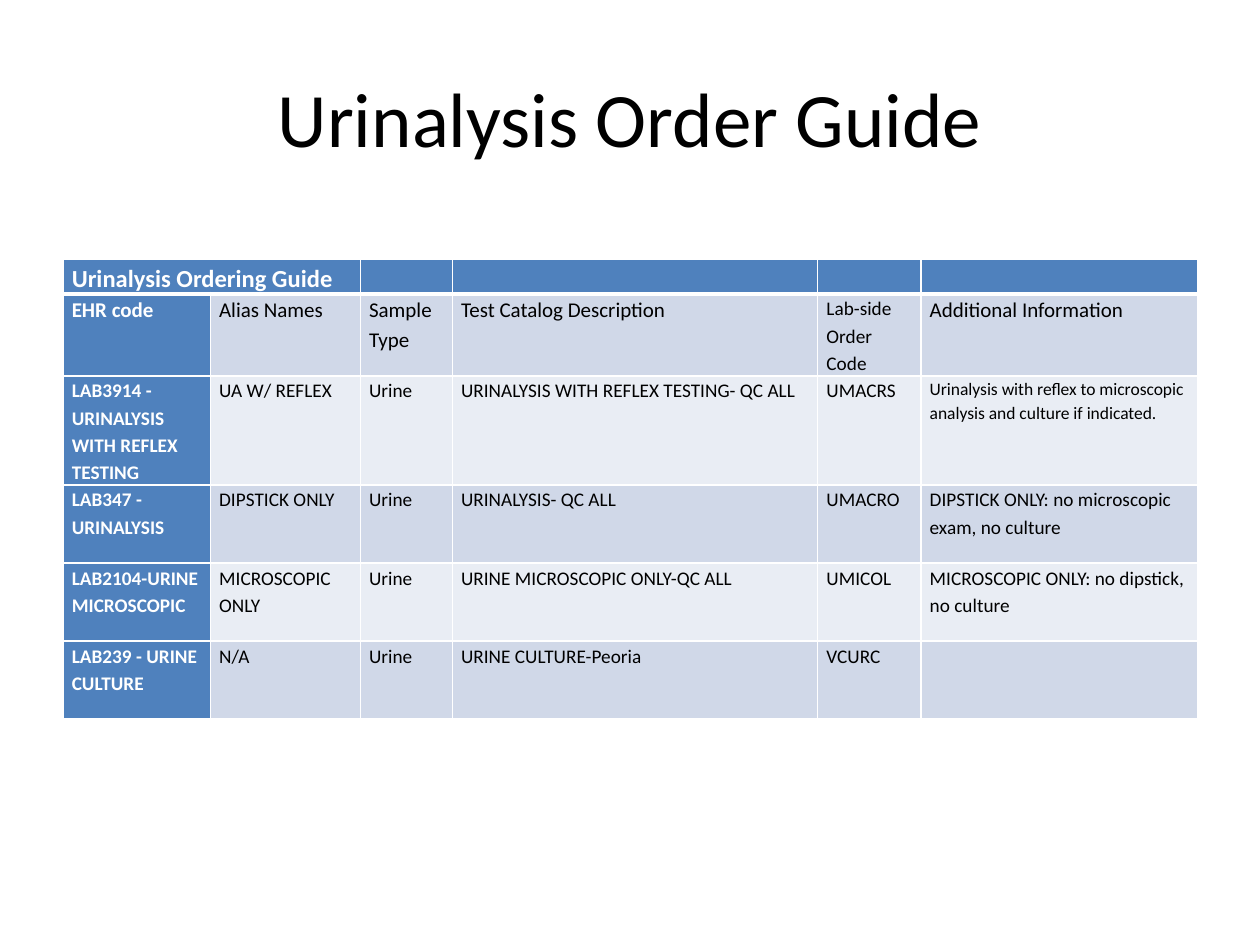
import pptx
import pptx.dml.color
import pptx.enum.text
import pptx.oxml.ns
import pptx.util
from lxml import etree
from pptx.util import Inches

FONT = "Calibri"
BLUE, WHITE, BLACK = "4F81BD", "FFFFFF", "000000"
BANDS = ("D0D8E8", "E9EDF4")

COLUMN_WIDTHS = (1.17, 1.19, 0.73, 2.9, 0.82, 2.2)
ROW_HEIGHTS = (0.26, 0.62, 0.83, 0.62, 0.62, 0.62)
ORDER_ROWS = (
    ("Urinalysis Ordering Guide", "", "", "", "", ""),
    ("EHR code", "Alias Names", "Sample Type", "Test Catalog Description",
     "Lab-side Order Code", "Additional Information"),
    ("LAB3914 - URINALYSIS WITH REFLEX TESTING", "UA W/ REFLEX", "Urine",
     "URINALYSIS WITH REFLEX TESTING- QC ALL", "UMACRS",
     "Urinalysis with reflex to microscopic analysis and culture if indicated."),
    ("LAB347 - URINALYSIS", "DIPSTICK ONLY", "Urine", "URINALYSIS- QC ALL",
     "UMACRO", "DIPSTICK ONLY: no microscopic exam, no culture"),
    ("LAB2104-URINE\nMICROSCOPIC", "MICROSCOPIC\nONLY", "Urine",
     "URINE MICROSCOPIC ONLY-QC ALL", "UMICOL",
     "MICROSCOPIC ONLY: no dipstick, no culture"),
    ("LAB239 - URINE CULTURE", "N/A", "Urine", "URINE CULTURE-Peoria", "VCURC", ""),
)
ROW_SIZES = (14, 12, 11, 11, 11, 11)
SIZE_EXCEPTIONS = {(1, 4): 11, (2, 5): 10}


def color(hex_value):
    return pptx.dml.color.RGBColor.from_string(hex_value)


def set_font(paragraph, size, hex_value, bold=False):
    paragraph.font.name = FONT
    paragraph.font.size = pptx.util.Pt(size)
    paragraph.font.bold = bold
    paragraph.font.color.rgb = color(hex_value)


def add_child(parent, tag, **attributes):
    return etree.SubElement(parent, pptx.oxml.ns.qn(tag), **attributes)


def set_borders(cell, top, bottom):
    properties = cell._tc.get_or_add_tcPr()
    for side, points in (("L", 1), ("R", 1), ("T", top), ("B", bottom)):
        line = add_child(properties, f"a:ln{side}", w=str(pptx.util.Pt(points)))
        add_child(add_child(line, "a:solidFill"), "a:srgbClr", val=WHITE)


def write_cell(cell, text, size, text_color, bold):
    cell.margin_left = cell.margin_right = Inches(0.07)
    cell.margin_top = cell.margin_bottom = 0
    cell.text = text
    for paragraph in cell.text_frame.paragraphs:
        paragraph.line_spacing = 1.15
        set_font(paragraph, size, text_color, bold)
        if not text:
            # Keeps an empty cell from stretching its row
            add_child(paragraph._p, "a:endParaRPr", sz=str(size * 100))


def add_title(slide, text):
    title = slide.shapes.title
    title.left, title.top = Inches(0.5), Inches(0.3)
    title.width, title.height = Inches(9), Inches(1.25)
    title.text_frame.text = text
    title.text_frame.vertical_anchor = pptx.enum.text.MSO_ANCHOR.MIDDLE
    heading = title.text_frame.paragraphs[0]
    heading.alignment = pptx.enum.text.PP_ALIGN.CENTER
    set_font(heading, 44, BLACK)


def add_order_table(slide):
    guide = slide.shapes.add_table(
        len(ROW_HEIGHTS), len(COLUMN_WIDTHS), Inches(0.5), Inches(2.06),
        Inches(sum(COLUMN_WIDTHS)), Inches(sum(ROW_HEIGHTS))).table
    guide.first_row = guide.horz_banding = False
    for column, width in zip(guide.columns, COLUMN_WIDTHS):
        column.width = Inches(width)
    for row, height in zip(guide.rows, ROW_HEIGHTS):
        row.height = Inches(height)

    for r, order in enumerate(ORDER_ROWS):
        for c, text in enumerate(order):
            cell = guide.cell(r, c)
            is_heading = r == 0 or c == 0
            size = SIZE_EXCEPTIONS.get((r, c), ROW_SIZES[r])
            write_cell(cell, text, size, WHITE if is_heading else BLACK, is_heading)
            # A thick rule separates the heading row from the rest
            set_borders(cell, top=3 if r == 1 else 1, bottom=3 if r == 0 else 1)
            cell.fill.solid()
            cell.fill.fore_color.rgb = color(BLUE if is_heading else BANDS[(r - 1) % 2])
    guide.cell(0, 0).merge(guide.cell(0, 1))


def main():
    deck = pptx.Presentation()
    deck.slide_width, deck.slide_height = Inches(10), Inches(7.5)
    slide = deck.slides.add_slide(deck.slide_layouts[5])
    add_title(slide, "Urinalysis Order Guide")
    add_order_table(slide)
    deck.save("out.pptx")


if __name__ == "__main__":
    main()
